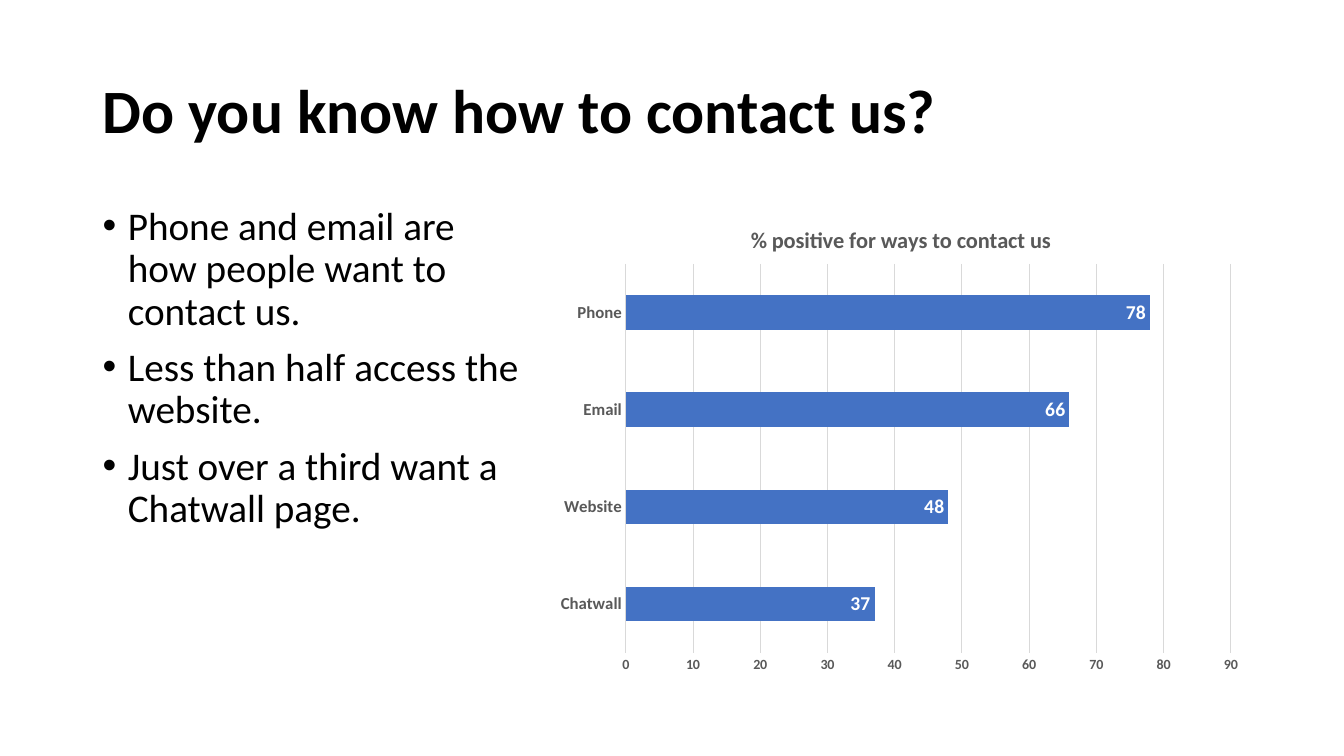
from lxml import etree
from pptx import Presentation
from pptx.chart.data import CategoryChartData
from pptx.dml.color import RGBColor
from pptx.enum.chart import XL_CHART_TYPE, XL_LABEL_POSITION, XL_TICK_MARK
from pptx.enum.text import MSO_ANCHOR
from pptx.oxml.ns import qn
from pptx.util import Inches, Pt

TITLE = "Do you know how to contact us?"
POINTS = [
    "Phone and email are how people want to contact us.",
    "Less than half access the website.",
    "Just over a third want a Chatwall page.",
]
HEAD = "% positive for ways to contact us"
WAYS = {"Chatwall": 37, "Website": 48, "Email": 66, "Phone": 78}

FONT = "Calibri"
BLACK = RGBColor(0, 0, 0)
WHITE = RGBColor(255, 255, 255)
GREY = RGBColor(0x59, 0x59, 0x59)
PALE = RGBColor(0xD9, 0xD9, 0xD9)
BLUE = RGBColor(0x44, 0x72, 0xC4)
BAR = XL_CHART_TYPE.BAR_CLUSTERED
END = XL_LABEL_POSITION.INSIDE_END
NONE = XL_TICK_MARK.NONE
MIDDLE = MSO_ANCHOR.MIDDLE

LEFT, TOP = 0.92, 2
WIDE, HIGH = 11.5, 4.76
SPLIT = 5.36


def style(font, size, color, bold=False):
    font.name = FONT
    font.size = Pt(size)
    font.color.rgb = color
    font.bold = bold


def add_text(slide, box, lines, size, bold=False):
    frame = slide.shapes.add_textbox(*map(Inches, box)).text_frame
    frame.word_wrap = True
    frame.text = "\n".join(lines)
    for para in frame.paragraphs:
        para.line_spacing = 0.9
        style(para.runs[0].font, size, BLACK, bold)
    return frame


def add_bullet(para):
    para.space_before = Pt(10)
    props = para._p.get_or_add_pPr()
    props.set("marL", str(Inches(0.25)))
    props.set("indent", str(-Inches(0.25)))
    etree.SubElement(props, qn("a:buFont")).set("typeface", "Arial")
    etree.SubElement(props, qn("a:buChar")).set("char", "•")


def place(parent, index, **parts):
    layout = parent.find(qn("c:layout"))
    if layout is None:
        layout = etree.Element(qn("c:layout"))
        parent.insert(index, layout)
    manual = etree.SubElement(layout, qn("c:manualLayout"))
    for tag, value in parts.items():
        etree.SubElement(manual, qn("c:" + tag)).set("val", str(value))


def add_bars(slide, box):
    data = CategoryChartData()
    data.categories = list(WAYS)
    data.add_series("Series 1", list(WAYS.values()))
    chart = slide.shapes.add_chart(BAR, *map(Inches, box), data).chart
    style(chart.font, 10, BLACK)
    chart.has_legend = False
    chart.has_title = True
    title = chart.chart_title
    title.text_frame.text = HEAD
    style(title.text_frame.paragraphs[0].runs[0].font, 16, GREY, True)
    place(title._element, 1, xMode="edge", yMode="edge", x=0.29, y=0.04)

    plot = chart.plots[0]
    plot.gap_width = 182
    plot.vary_by_categories = False
    bars = plot.series[0]
    bars.format.fill.solid()
    bars.format.fill.fore_color.rgb = BLUE
    labels = bars.data_labels
    labels.show_value = True
    labels.position = END
    style(labels.font, 14, WHITE, True)
    place(plot._element.getparent(), 0, layoutTarget="inner", xMode="edge",
          yMode="edge", x=0.12, y=0.13, w=0.85, h=0.81)

    ways, scale = chart.category_axis, chart.value_axis
    for axis, size in ((ways, 12), (scale, 10)):
        axis.major_tick_mark = axis.minor_tick_mark = NONE
        style(axis.tick_labels.font, size, GREY, True)
    scale.minimum_scale, scale.maximum_scale, scale.major_unit = 0, 90, 10
    scale.has_major_gridlines = True
    scale.format.line.fill.background()
    for line in (ways.format.line, scale.major_gridlines.format.line):
        line.color.rgb = PALE
        line.width = Pt(0.75)


def main():
    deck = Presentation()
    deck.slide_width, deck.slide_height = Inches(13.33), Inches(7.5)
    slide = deck.slides.add_slide(deck.slide_layouts[6])
    head = add_text(slide, (LEFT, 0.4, WIDE, 1.45), [TITLE], 44, True)
    head.vertical_anchor = MIDDLE
    body = add_text(slide, (LEFT, TOP, SPLIT - LEFT, HIGH), POINTS, 28)
    for para in body.paragraphs:
        add_bullet(para)
    add_bars(slide, (SPLIT, TOP, LEFT + WIDE - SPLIT, HIGH))
    deck.save("out.pptx")


if __name__ == "__main__":
    main()
